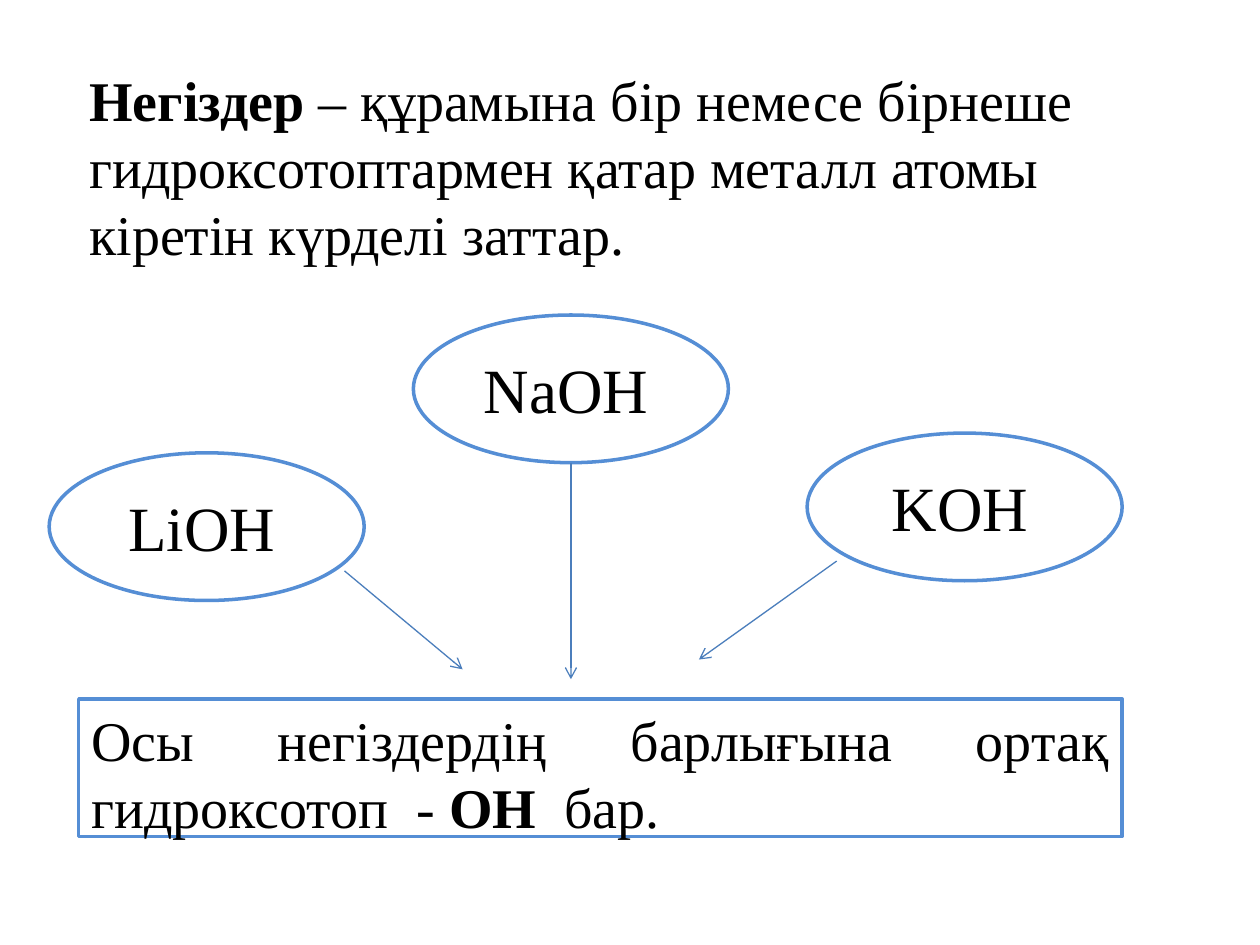
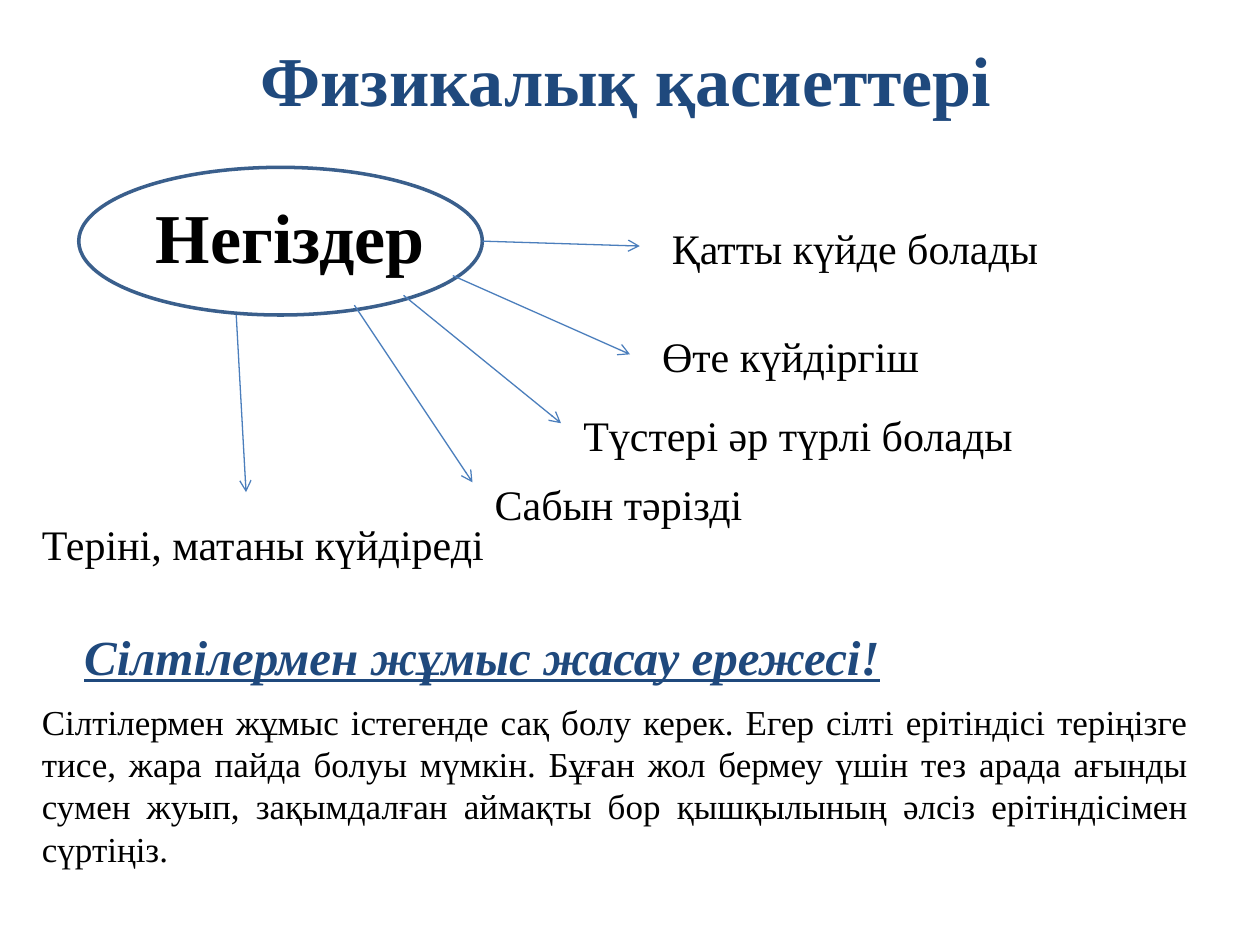
from dataclasses import dataclass

from lxml import etree
from pptx import Presentation
from pptx import util as u
from pptx.dml import color as dc
from pptx.enum import shapes as es, text as et
from pptx.oxml import ns

# Shared look
SCALE = 914400 / 128  # EMU in one px
FACE = "Times New Roman"
BLACK, WHITE, NAVY = "000000", "FFFFFF", "1F497D"
SKY, STEEL, DEEP = "558ED5", "4B7EBC", "3A5F8C"
LEFT, MID, JUST = et.PP_ALIGN.LEFT, et.PP_ALIGN.CENTER, et.PP_ALIGN.JUSTIFY
OVAL, RECT = es.MSO_SHAPE.OVAL, es.MSO_SHAPE.RECTANGLE


@dataclass
class Box:
    x: int
    y: int
    w: int
    h: int


@dataclass
class Para:
    words: list[str]
    size: int
    bold: tuple[int, ...] = ()  # indexes of the bold pieces of words
    align: et.PP_ALIGN = LEFT
    color: str = BLACK
    fancy: bool = False  # italic and underlined
    inset: int = 0
    before: int | None = None


@dataclass
class Arrow:
    x1: int
    y1: int
    x2: int
    y2: int


def px(n: int) -> u.Emu:
    return u.Emu(round(n * SCALE))


def rgb(code: str) -> dc.RGBColor:
    return dc.RGBColor.from_string(code)


def place(shape, box: Box) -> None:
    shape.left, shape.top = px(box.x), px(box.y)
    shape.width, shape.height = px(box.w), px(box.h)


def write(frame, paras: list[Para]) -> None:
    for i, item in enumerate(paras):
        para = frame.paragraphs[0] if i == 0 else frame.add_paragraph()
        para.text = item.words[0]
        for piece in item.words[1:]:
            para.add_run().text = piece
        para.alignment = item.align
        if item.before is not None:
            para.space_before = u.Pt(item.before)
        props = para._p.get_or_add_pPr()
        props.set("marL", str(px(item.inset)))
        props.set("indent", "0")
        etree.SubElement(props, ns.qn("a:buNone"))
        for j, run in enumerate(para.runs):
            font = run.font
            font.name, font.size = FACE, u.Pt(item.size)
            font.bold = j in item.bold
            font.italic = font.underline = item.fancy
            font.color.rgb = rgb(item.color)


def label(slide, box: Box, *paras: Para) -> None:
    shape = slide.shapes.add_textbox(0, 0, 0, 0)
    frame = shape.text_frame
    frame.word_wrap = True
    frame.auto_size = et.MSO_AUTO_SIZE.SHAPE_TO_FIT_TEXT
    write(frame, list(paras))
    place(shape, box)


def outline(slide, kind: es.MSO_SHAPE, box: Box, color: str) -> None:
    shape = slide.shapes.add_shape(kind, 0, 0, 0, 0)
    place(shape, box)
    shape.shadow.inherit = False
    shape.fill.solid()
    shape.fill.fore_color.rgb = rgb(WHITE)
    shape.line.color.rgb = rgb(color)
    shape.line.width = u.Pt(2)


def point(slide, arrow: Arrow) -> None:
    ends = map(px, (arrow.x1, arrow.y1, arrow.x2, arrow.y2))
    line = slide.shapes.add_connector(es.MSO_CONNECTOR.STRAIGHT, *ends)
    line.line.color.rgb = rgb(STEEL)
    line.line.width = u.Pt(0.75)
    etree.SubElement(line.line._get_or_add_ln(), ns.qn("a:tailEnd"), type="arrow")
    etree.SubElement(line._element.spPr, ns.qn("a:effectLst"))


def bases(deck) -> None:
    slide = deck.slides.add_slide(deck.slide_layouts[1])
    title, body = slide.placeholders
    title._element.getparent().remove(title._element)

    # Definition
    place(body, Box(30, 60, 1192, 634))
    body.text_frame.auto_size = et.MSO_AUTO_SIZE.NONE
    write(body.text_frame, [Para(
        ["Негіздер ", "– құрамына бір немесе бірнеше гидроксотоптармен "
         "қатар металл атомы кіретін күрделі заттар."],
        32, bold=(0,), inset=48)])

    # Examples, with labels 5 px left of each oval's centre
    wide, high = 320, 150
    for name, x, y in (("LiOH", 50, 460), ("NaOH", 420, 320), ("KOH", 820, 440)):
        outline(slide, OVAL, Box(x, y, wide, high), SKY)
        label(slide, Box(x + 20, y + 30, wide - 50, 91),
              Para([name], 36, align=MID))
    for arrow in (Arrow(350, 580, 470, 680), Arrow(580, 470, 580, 690),
                  Arrow(850, 570, 710, 670)):
        point(slide, arrow)

    # What they share
    outline(slide, RECT, Box(80, 710, 1060, 140), SKY)
    label(slide, Box(80, 710, 1060, 151), Para(
        ["Осы негіздердің барлығына ортақ гидроксотоп  - ", "ОН", "  бар."],
        32, bold=(1,), align=JUST))


def traits(deck) -> None:
    slide = deck.slides.add_slide(deck.slide_layouts[5])
    title = slide.shapes.title
    place(title, Box(60, 0, 1152, 160))
    write(title.text_frame, [Para(["Физикалық қасиеттері"], 40, bold=(0,),
                                  align=MID, color=NAVY)])

    # Hub
    outline(slide, OVAL, Box(80, 170, 410, 150), DEEP)
    label(slide, Box(140, 190, 310, 98),
          Para(["Негіздер"], 40, bold=(0,), align=MID))

    # Properties, each at the end of an arrow
    for words, box, arrow in (
        ("Қатты күйде болады", Box(670, 220, 470, 64), Arrow(490, 245, 650, 250)),
        ("Өте күйдіргіш", Box(660, 330, 310, 64), Arrow(460, 280, 640, 360)),
        ("Түстері әр түрлі болады", Box(580, 410, 540, 64), Arrow(410, 300, 570, 430)),
        ("Сабын тәрізді", Box(490, 480, 300, 64), Arrow(360, 310, 480, 490)),
        ("Теріні, матаны күйдіреді", Box(30, 520, 490, 64), Arrow(240, 320, 250, 500)),
    ):
        point(slide, arrow)
        label(slide, box, Para([words], 24))

    # Safety rule
    label(slide, Box(30, 630, 1190, 306),
          Para(["Сілтілермен жұмыс жасау ережесі!"], 28, bold=(0,),
               color=NAVY, fancy=True, inset=43),
          Para(["Сілтілермен жұмыс істегенде сақ болу керек. Егер сілті ерітіндісі "
                "теріңізге тисе, жара пайда болуы мүмкін. Бұған жол бермеу үшін тез "
                "арада ағынды сумен жуып, зақымдалған аймақты бор қышқылының әлсіз "
                "ерітіндісімен сүртіңіз."], 20, align=JUST, before=9))


def main() -> None:
    deck = Presentation()
    deck.slide_width, deck.slide_height = px(1280), px(960)
    bases(deck)
    traits(deck)
    deck.save("out.pptx")


if __name__ == "__main__":
    main()
